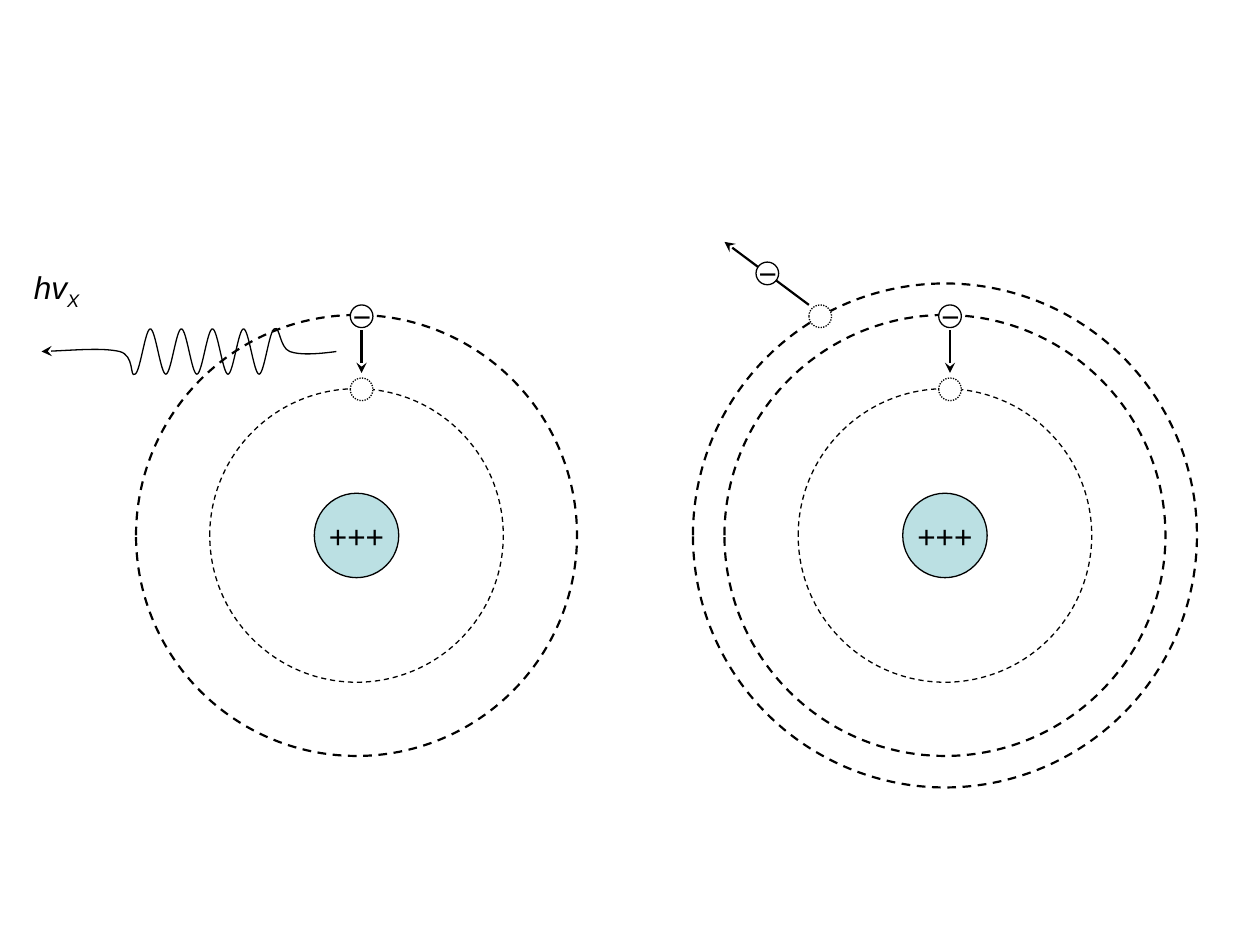
from lxml.etree import SubElement
from pptx import Presentation
from pptx.dml.color import RGBColor
from pptx.enum.dml import MSO_LINE_DASH_STYLE as Dash
from pptx.enum.shapes import MSO_CONNECTOR as Connector, MSO_SHAPE as Shape
from pptx.enum.text import MSO_ANCHOR as Anchor, MSO_AUTO_SIZE as AutoSize, PP_ALIGN as Align
from pptx.oxml.ns import qn
from pptx.util import Inches, Pt

COLORS = {"ink": "000000", "paper": "FFFFFF", "nucleus": "BBE0E3"}
THIN, THICK = 0.75, 1.25
PARTICLE_SIZE = 0.18
ATOM_Y = 4.25


def color(name):
    return RGBColor.from_string(COLORS[name])


def add_run(paragraph, text, size=18, italic=False, baseline=None):
    run = paragraph.add_run()
    run.text = text
    run.font.name = "Arial"
    run.font.size = Pt(size)
    run.font.italic = italic
    run.font.color.rgb = color("ink")
    if baseline is not None:
        run.font._element.set("baseline", str(baseline))


class AtomSlide:
    def __init__(self, presentation):
        self.slide = presentation.slides.add_slide(presentation.slide_layouts[6])
        self.shapes = self.slide.shapes

    def style_line(self, line, width, dash=None):
        line.color.rgb = color("ink")
        line.width = Pt(width)
        if dash is not None:
            line.dash_style = dash

    def add_arrowhead(self, line):
        SubElement(line._get_or_add_ln(), qn("a:tailEnd"), type="stealth")

    def circle(self, x, y, size, fill=None, width=THIN, dash=None, text=None, italic=False):
        shape = self.shapes.add_shape(Shape.OVAL, Inches(x - size / 2), Inches(y - size / 2),
                                      Inches(size), Inches(size))
        shape.shadow.inherit = False
        if fill:
            shape.fill.solid()
            shape.fill.fore_color.rgb = color(fill)
        else:
            shape.fill.background()
        self.style_line(shape.line, width, dash)
        if text:
            frame = shape.text_frame
            frame.word_wrap = False
            frame.vertical_anchor = Anchor.MIDDLE
            paragraph = frame.paragraphs[0]
            paragraph.alignment = Align.CENTER
            add_run(paragraph, text, italic=italic)

    def orbit(self, x, size, width=THICK):
        self.circle(x, ATOM_Y, size, width=width, dash=Dash.DASH)

    def electron(self, x, y):
        self.circle(x, y, PARTICLE_SIZE, "paper", text="−", italic=True)

    def hole(self, x, y):
        self.circle(x, y, PARTICLE_SIZE, "paper", dash=Dash.ROUND_DOT)

    def arrow(self, start, end):
        points = [Inches(value) for value in (*start, *end)]
        connector = self.shapes.add_connector(Connector.STRAIGHT, *points)
        self.style_line(connector.line, THICK)
        self.add_arrowhead(connector.line)
        SubElement(connector._element.spPr, qn("a:effectLst"))

    def atom(self, x):
        self.circle(x, ATOM_Y, 0.67, "nucleus", text="+++")
        self.orbit(x, 2.33, THIN)
        self.orbit(x, 3.5)
        particle_x = x + 0.04
        self.hole(particle_x, 3.09)
        self.arrow((particle_x, 2.62), (particle_x, 2.96))
        self.electron(particle_x, 2.51)

    def curve(self, start, controls):
        builder = self.shapes.build_freeform(Inches(start[0]), Inches(start[1]))
        builder.add_line_segments([(Inches(x), Inches(y)) for x, y in controls], close=False)
        shape = builder.convert_to_shape()
        segments = list(shape._element.iter(qn("a:lnTo")))
        for index in range(0, len(segments), 3):
            bezier = SubElement(segments[index].getparent(), qn("a:cubicBezTo"))
            for segment in segments[index:index + 3]:
                bezier.append(segment[0])
                segment.getparent().remove(segment)
        shape.shadow.inherit = False
        shape.fill.background()
        self.style_line(shape.line, THIN)
        self.add_arrowhead(shape.line)

    def label(self, x, y, width, height, runs):
        box = self.shapes.add_textbox(Inches(x), Inches(y), Inches(width), Inches(height))
        frame = box.text_frame
        frame.word_wrap = False
        frame.auto_size = AutoSize.SHAPE_TO_FIT_TEXT
        for text, baseline in runs:
            add_run(frame.paragraphs[0], text, italic=True, baseline=baseline)


def wave_controls():
    crest, trough = 2.61, 2.97
    first_x, last_x, half_waves = 2.18, 1.07, 9
    step = (first_x - last_x) / half_waves
    controls = [(2.52, 2.81), (2.38, 2.82), (2.3, 2.79),
                (2.22, 2.76), (2.22, 2.58), (first_x, crest)]
    for index in range(half_waves):
        x = first_x - index * step
        start_y, end_y = (trough, crest) if index % 2 else (crest, trough)
        controls += [(x - step / 3, start_y), (x - 2 * step / 3, end_y), (x - step, end_y)]
    return controls + [(1.03, 3), (1.07, 2.82), (0.95, 2.79),
                       (0.82, 2.76), (0.58, 2.78), (0.33, 2.79)]


def main():
    presentation = Presentation()
    presentation.slide_width = Inches(10)
    presentation.slide_height = Inches(7.5)
    page = AtomSlide(presentation)

    photon_atom_x, auger_atom_x = 2.83, 7.5
    page.atom(photon_atom_x)
    page.atom(auger_atom_x)

    page.curve((2.67, 2.79), wave_controls())
    page.label(0.17, 2.08, 0.58, 0.4, [("hv", None), ("X", -25000)])

    page.orbit(auger_atom_x, 4)
    page.hole(6.51, 2.51)
    page.arrow((6.42, 2.42), (5.75, 1.92))
    page.electron(6.09, 2.17)

    presentation.save("out.pptx")


if __name__ == "__main__":
    main()
